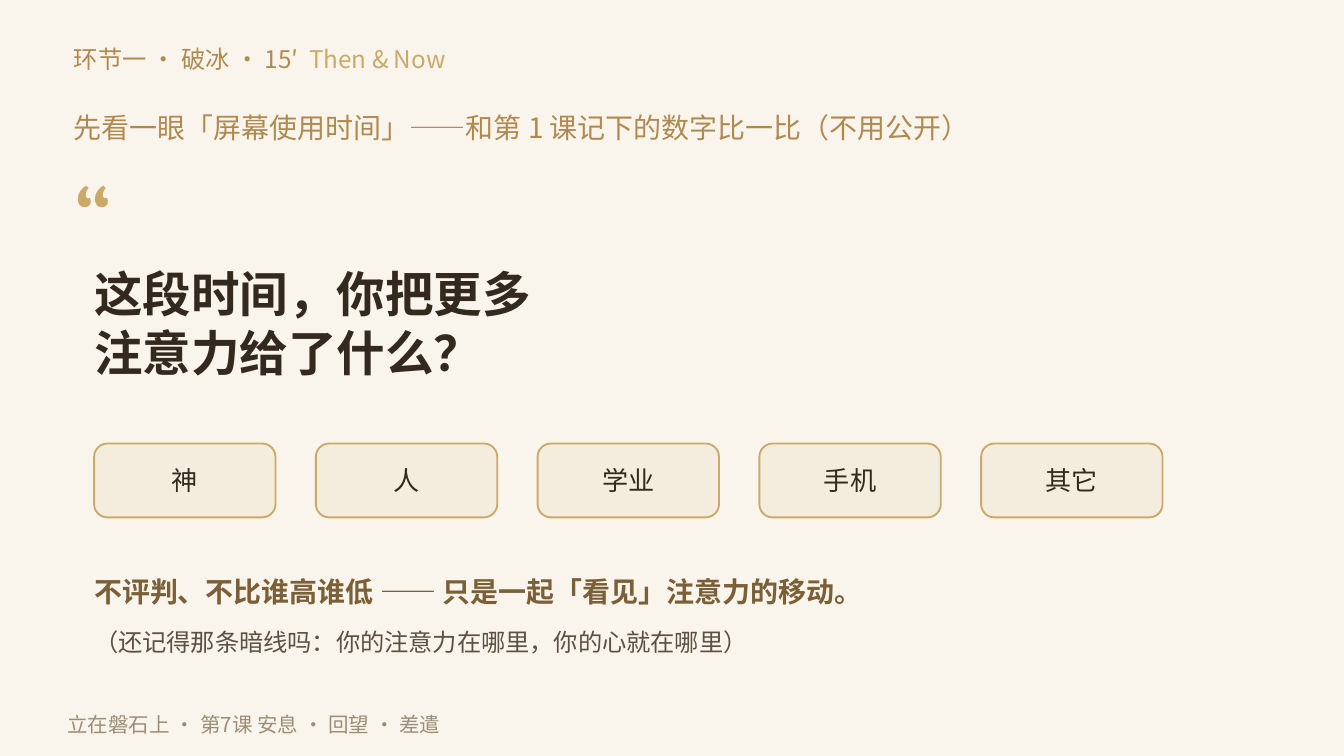
import pptx
import pptx.dml.color
import pptx.enum.shapes
import pptx.enum.text
import pptx.oxml
import pptx.oxml.ns
import pptx.util
from pptx.util import Pt

COLORS = {
    "paper": "FAF5EC",
    "chip": "F4ECDD",
    "gold": "CBA968",
    "bronze": "B0894F",
    "brown": "7A5F37",
    "ink": "33291E",
    "aside": "5C5043",
    "footer": "9C8E76",
}
SANS = "Noto Sans CJK SC"
SERIF = "Cambria"
ALIGN = pptx.enum.text.PP_ALIGN


def color(name):
    return pptx.dml.color.RGBColor.from_string(COLORS[name])


def write(shape, paragraphs, size, bold=False, font=SANS, align=ALIGN.LEFT):
    """Fill a shape with paragraphs, each a list of (text, colour name) runs."""
    frame = shape.text_frame
    frame.word_wrap = True
    frame.auto_size = pptx.enum.text.MSO_AUTO_SIZE.NONE
    frame.vertical_anchor = pptx.enum.text.MSO_ANCHOR.MIDDLE
    frame.margin_left = frame.margin_right = 0
    frame.margin_top = frame.margin_bottom = 0
    for index, runs in enumerate(paragraphs):
        paragraph = frame.paragraphs[0] if index == 0 else frame.add_paragraph()
        paragraph.alignment = align
        for text, tone in runs:
            run = paragraph.add_run()
            run.text = text
            run.font.size = Pt(size)
            run.font.bold = bold
            run.font.color.rgb = color(tone)
            run.font.name = font
            east_asian = pptx.oxml.parse_xml(
                f'<a:ea {pptx.oxml.ns.nsdecls("a")} typeface="{font}"/>'
            )
            run.font._element.append(east_asian)


def add_line(slide, left, top, width, height, runs, size, **style):
    """Add a one-paragraph text box."""
    box = slide.shapes.add_textbox(Pt(left), Pt(top), Pt(width), Pt(height))
    write(box, [runs], size, **style)


def add_header(slide, left, top):
    add_line(slide, left, top, 612, 23,
             [("环节一 · 破冰 · 15′  ", "bronze"), ("Then & Now", "gold")], 13)
    add_line(slide, left, top + 33.8, 648, 28.8,
             [("先看一眼「屏幕使用时间」——和第 1 课记下的数字比一比（不用公开）", "bronze")], 15)


def add_question(slide, left, top, width, height):
    add_line(slide, left - 10.8, top - 43.2, 72, 50.4, [("“", "gold")], 56, font=SERIF)
    question = slide.shapes.title
    question.left, question.top = Pt(left), Pt(top)
    question.width, question.height = Pt(width), Pt(height)
    write(question, [[("这段时间，你把更多", "ink")], [("注意力给了什么？", "ink")]],
          26, bold=True)


def add_choices(slide, left, top, width, height, gap=21.6):
    choices = ["神", "人", "学业", "手机", "其它"]
    chip_width = (width - gap * (len(choices) - 1)) / len(choices)
    for index, choice in enumerate(choices):
        chip = slide.shapes.add_shape(
            pptx.enum.shapes.MSO_SHAPE.ROUNDED_RECTANGLE,
            Pt(left + index * (chip_width + gap)), Pt(top), Pt(chip_width), Pt(height))
        chip.adjustments[0] = 0.18
        chip.shadow.inherit = False
        chip.fill.solid()
        chip.fill.fore_color.rgb = color("chip")
        chip.line.color.rgb = color("gold")
        chip.line.width = Pt(1)
        write(chip, [[(choice, "ink")]], 14, align=ALIGN.CENTER)


def add_reminder(slide, left, top, width):
    add_line(slide, left, top, width, 28.8,
             [("不评判、不比谁高谁低 —— 只是一起「看见」注意力的移动。", "brown")], 15, bold=True)
    add_line(slide, left, top + 28.8, width, 25.2,
             [("（还记得那条暗线吗：你的注意力在哪里，你的心就在哪里）", "aside")], 13)


def add_footer(slide, left, top):
    add_line(slide, left, top, 540, 20.2,
             [("立在磐石上 · 第7课 安息 · 回望 · 差遣", "footer")], 11)


def main():
    deck = pptx.Presentation()
    deck.slide_width, deck.slide_height = Pt(720), Pt(405)
    slide = deck.slides.add_slide(deck.slide_layouts.get_by_name("Title Only"))
    slide.background.fill.solid()
    slide.background.fill.fore_color.rgb = color("paper")

    add_header(slide, 39.6, 20.2)
    add_question(slide, 50.4, 133.2, 612, 79.2)
    add_choices(slide, 50.4, 237.6, 572.4, 39.6)
    add_reminder(slide, 50.4, 302.4, 612)
    add_footer(slide, 36, 378)
    deck.save("out.pptx")


if __name__ == "__main__":
    main()
